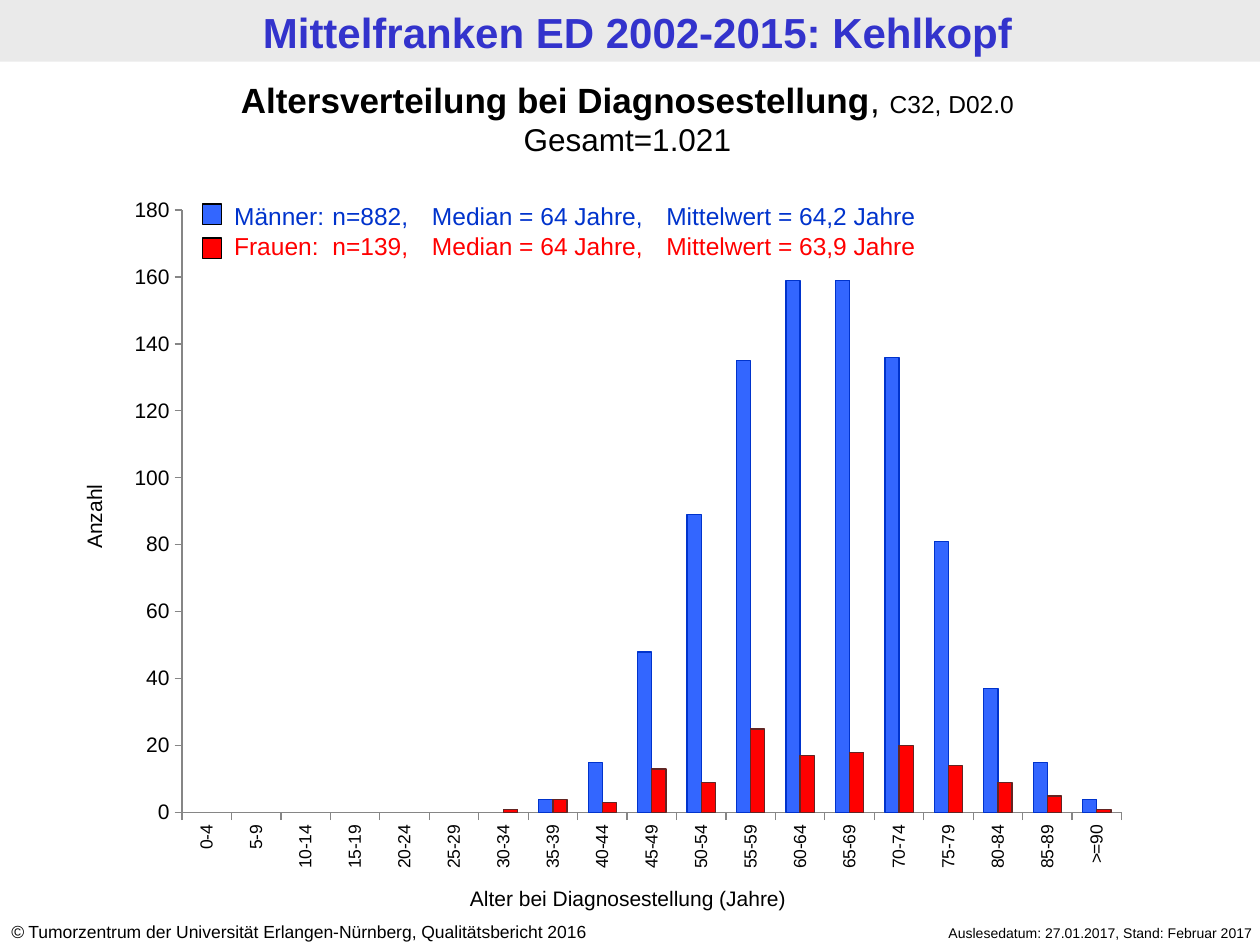
from lxml.etree import SubElement
from pptx import Presentation
from pptx.chart.data import CategoryChartData
from pptx.dml.color import RGBColor
from pptx.enum.chart import XL_CHART_TYPE as ChartType, XL_TICK_MARK as TickMark
from pptx.enum.shapes import MSO_SHAPE as Shape
from pptx.enum.text import PP_ALIGN as Align
from pptx.oxml.ns import qn
from pptx.util import Inches, Pt

COLORS = {
    "black": "000000", "white": "FFFFFF", "band": "EAEAEA", "title": "3333CC",
    "men": "3366FF", "men_dark": "0033CC", "women": "FF0000",
    "women_edge": "632523", "axis": "868686",
}
AGE_GROUPS = [f"{age}-{age + 4}" for age in range(0, 90, 5)] + [">=90"]
MEN = [None] * 7 + [4, 15, 48, 89, 135, 159, 159, 136, 81, 37, 15, 4]
WOMEN = [None] * 6 + [1, 4, 3, 13, 9, 25, 17, 18, 20, 14, 9, 5, 1]


def rgb(name):
    return RGBColor.from_string(COLORS[name])


def set_font(font, size, color="black", bold=False, italic=False):
    font.name = "Arial"
    font.size = Pt(size)
    font.color.rgb = rgb(color)
    font.bold = bold
    font.italic = italic


def add_tabs(paragraph, stops):
    tab_list = SubElement(paragraph._p.get_or_add_pPr(), qn("a:tabLst"))
    for stop in stops:
        SubElement(tab_list, qn("a:tab"), pos=str(Inches(stop)), algn="l")


def add_text(slide, box, paragraphs, align=Align.LEFT, tabs=(), rotation=0):
    """Each paragraph is a list of (text, font format) runs."""
    text_box = slide.shapes.add_textbox(*map(Inches, box))
    text_box.rotation = rotation
    frame = text_box.text_frame
    frame.word_wrap = True
    for index, runs in enumerate(paragraphs):
        paragraph = frame.add_paragraph() if index else frame.paragraphs[0]
        paragraph.alignment = align
        if tabs:
            add_tabs(paragraph, tabs)
        for text, font_format in runs:
            run = paragraph.add_run()
            run.text = text
            set_font(run.font, **font_format)
    return frame


def add_box(slide, box, fill, outline=None):
    rectangle = slide.shapes.add_shape(Shape.RECTANGLE, *map(Inches, box))
    rectangle.shadow.inherit = False
    rectangle.fill.solid()
    rectangle.fill.fore_color.rgb = rgb(fill)
    if outline:
        rectangle.line.color.rgb = rgb(outline)
        rectangle.line.width = Pt(0.75)
    else:
        rectangle.line.fill.background()


def style_axis(axis, size):
    axis.has_major_gridlines = False
    axis.major_tick_mark = TickMark.OUTSIDE
    axis.minor_tick_mark = TickMark.NONE
    axis.format.line.color.rgb = rgb("axis")
    axis.format.line.width = Pt(0.75)
    set_font(axis.tick_labels.font, size)


def place_plot(plot_area, **fractions):
    for old_layout in plot_area.findall(qn("c:layout")):
        plot_area.remove(old_layout)
    layout = SubElement(plot_area, qn("c:layout"))
    plot_area.insert(0, layout)
    manual = SubElement(layout, qn("c:manualLayout"))
    SubElement(manual, qn("c:layoutTarget"), val="inner")
    for mode in ("xMode", "yMode"):
        SubElement(manual, qn(f"c:{mode}"), val="edge")
    for key, fraction in fractions.items():
        SubElement(manual, qn(f"c:{key}"), val=str(fraction))


def add_age_chart(slide, box):
    data = CategoryChartData()
    data.categories = AGE_GROUPS
    data.add_series("Männer", MEN)
    data.add_series("Frauen", WOMEN)
    chart = slide.shapes.add_chart(
        ChartType.COLUMN_CLUSTERED, *map(Inches, box), data).chart
    chart.has_legend = False
    chart.has_title = False
    set_font(chart.font, 18)
    chart.font.name = "Calibri"

    # Bars
    bars = chart.plots[0]
    bars.gap_width = 150
    bars.overlap = 0
    bars.vary_by_categories = False
    looks = [("men", "men_dark"), ("women", "women_edge")]
    for series, (fill, edge) in zip(bars.series, looks):
        series.format.fill.solid()
        series.format.fill.fore_color.rgb = rgb(fill)
        series.format.line.color.rgb = rgb(edge)
        series.format.line.width = Pt(0.75)

    # Axes
    style_axis(chart.category_axis, 10)
    style_axis(chart.value_axis, 12)
    chart.value_axis.minimum_scale = 0
    chart.value_axis.maximum_scale = 180
    chart.value_axis.major_unit = 20

    # Upright age labels and fixed plot position
    plot_area = chart._chartSpace.find(f".//{qn('c:plotArea')}")
    label_body = plot_area.find(f"{qn('c:catAx')}/{qn('c:txPr')}/{qn('a:bodyPr')}")
    label_body.set("rot", "-5400000")
    label_body.set("vert", "horz")
    place_plot(plot_area, x=0.07, y=0.04, w=0.91, h=0.86)
    for key, fraction in {"x": 0.0655, "y": 0.0355, "w": 0.914, "h": 0.862}.items():
        plot_area.find(f".//{qn('c:' + key)}").set("val", str(fraction))


def main():
    prs = Presentation()
    prs.slide_width, prs.slide_height = Inches(10), Inches(7.5)
    slide = prs.slides.add_slide(prs.slide_layouts[6])

    # Title band
    add_box(slide, (0, 0, 10, 0.49), "band")
    title = add_text(
        slide, (0.06, 0.01, 10, 0.49),
        [[("Mittelfranken ED 2002-2015: Kehlkopf",
           dict(size=24, color="title", bold=True))]], align=Align.CENTER)
    title.margin_left = title.margin_right = Inches(0.09)
    title.margin_top = title.margin_bottom = Inches(0.04)

    # Footer
    add_text(slide, (-0.01, 7.26, 5.24, 0.27), [[
        ("©", dict(size=10, italic=True)),
        (" Tumorzentrum der Universität Erlangen-Nürnberg, Qualitätsbericht 2016",
         dict(size=10))]])
    add_text(slide, (6.65, 7.29, 3.39, 0.24),
             [[("Auslesedatum: 27.01.2017, Stand: Februar 2017", dict(size=8))]],
             align=Align.RIGHT)

    # Chart and its heading
    add_age_chart(slide, (0.91, 1.47, 8.16, 5.55))
    add_text(slide, (-0.04, 0.57, 10.04, 0.74), [
        [("Altersverteilung bei Diagnosestellung", dict(size=20, bold=True)),
         (", ", dict(size=20)), ("C32, D02.0", dict(size=14))],
        [("Gesamt=1.021", dict(size=18))]], align=Align.CENTER)

    # Key with statistics
    add_text(slide, (1.76, 1.55, 6.85, 0.57), [
        [("Männer: \tn=882, \tMedian = 64 Jahre, \tMittelwert = 64,2 Jahre",
          dict(size=14, color="men_dark"))],
        [("Frauen: \tn=139, \tMedian = 64 Jahre,\tMittelwert = 63,9 Jahre",
          dict(size=14, color="women"))]], tabs=(0.78, 0.88, 1.57, 3.43))
    for row, group in enumerate(("men", "women")):
        add_box(slide, (1.61, 1.62 + 0.27 * row, 0.15, 0.16), group, "black")

    # Axis titles
    add_text(slide, (3.45, 6.98, 3.07, 0.3),
             [[("Alter bei Diagnosestellung (Jahre)", dict(size=12))]],
             align=Align.CENTER)
    add_text(slide, (-0.56, 3.95, 2.61, 0.3), [[("Anzahl", dict(size=12))]],
             align=Align.CENTER, rotation=270)

    prs.save("out.pptx")


if __name__ == "__main__":
    main()
